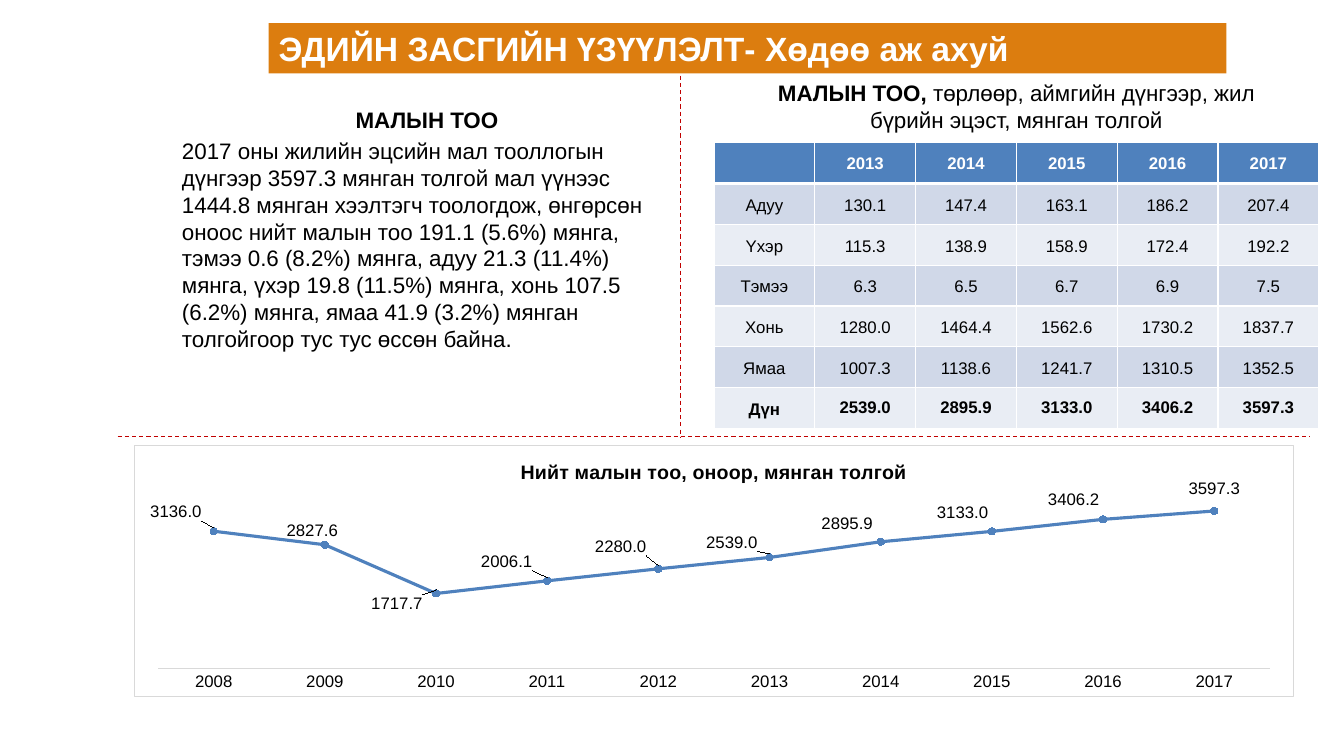
from pptx import Presentation
from pptx.chart.data import CategoryChartData
from pptx.dml.color import RGBColor
from pptx.enum.chart import XL_CHART_TYPE, XL_LABEL_POSITION, XL_MARKER_STYLE, XL_TICK_MARK
from pptx.enum.dml import MSO_LINE
from pptx.enum.shapes import MSO_CONNECTOR, MSO_SHAPE
from pptx.enum.text import MSO_ANCHOR, PP_ALIGN
from pptx.oxml import parse_xml
from pptx.oxml.ns import nsdecls
from pptx.util import Pt

FONT, BLACK, WHITE = "Arial", "000000", "FFFFFF"
BLUE, ORANGE, RED, GREY = "4F81BD", "DC7D0F", "C00000", "D9D9D9"
BANDS = ("E9EDF4", "D0D8E8")

YEARS = ["2013", "2014", "2015", "2016", "2017"]
HERD = [
    ["", *YEARS],
    ["Адуу", "130.1", "147.4", "163.1", "186.2", "207.4"],
    ["Yхэр", "115.3", "138.9", "158.9", "172.4", "192.2"],
    ["Тэмээ", "6.3", "6.5", "6.7", "6.9", "7.5"],
    ["Хонь", "1280.0", "1464.4", "1562.6", "1730.2", "1837.7"],
    ["Ямаа", "1007.3", "1138.6", "1241.7", "1310.5", "1352.5"],
    ["Дүн", "2539.0", "2895.9", "3133.0", "3406.2", "3597.3"],
]
TOTALS = {
    "2008": 3136.0, "2009": 2827.6, "2010": 1717.7, "2011": 2006.1, "2012": 2280.0,
    "2013": 2539.0, "2014": 2895.9, "2015": 3133.0, "2016": 3406.2, "2017": 3597.3,
}
LABEL_SHIFTS = [(-27, -2), (-9, 2), (-28, 19), (-29, -2), (-27, -4),
                (-27, 1), (-24, -1), (-21, -2), (-21, -2), (0, -4)]
SUMMARY = (
    "2017 оны жилийн эцсийн мал тооллогын дүнгээр 3597.3 мянган толгой мал үүнээс "
    "1444.8 мянган хээлтэгч тоологдож, өнгөрсөн оноос нийт малын тоо 191.1 (5.6%) мянга, "
    "тэмээ 0.6 (8.2%) мянга, адуу 21.3 (11.4%) мянга, үхэр 19.8 (11.5%) мянга, "
    "хонь 107.5 (6.2%) мянга, ямаа 41.9 (3.2%) мянган толгойгоор тус тус өссөн байна."
)


def rgb(value):
    """Turn a hex string into a colour."""
    return RGBColor.from_string(value)


def layout_xml(x, y, size="", target=""):
    """Make a manual chart layout."""
    return parse_xml(
        f'<c:layout {nsdecls("c")}><c:manualLayout>{target}'
        f'<c:x val="{x:.4f}"/><c:y val="{y:.4f}"/>{size}</c:manualLayout></c:layout>')


class SlideBuilder:
    """Hold the style and the current slide."""

    def __init__(self, slide, font):
        """Keep the slide and the font name."""
        self.shapes = slide.shapes
        self.font = font

    def style(self, font, size, color, bold=False):
        """Apply the typeface, size, colour and weight."""
        font.name, font.size, font.bold = self.font, Pt(size), bold
        font.color.rgb = rgb(color)

    def fill_text(self, tf, paragraphs, size, color, anchor):
        """Fill a frame from (alignment, [(text, bold), ...]) pairs."""
        tf.word_wrap = True
        tf.vertical_anchor = anchor
        for i, (align, runs) in enumerate(paragraphs):
            p = tf.add_paragraph() if i else tf.paragraphs[0]
            p.alignment = align
            if i:
                p.space_before = Pt(size * 0.2)
            for text, bold in runs:
                r = p.add_run()
                r.text = text
                self.style(r.font, size, color, bold)

    def text(self, x, y, w, h, paragraphs, size, anchor=MSO_ANCHOR.TOP, left=7.2, right=7.2):
        """Add a wrapped text box."""
        tf = self.shapes.add_textbox(Pt(x), Pt(y), Pt(w), Pt(h)).text_frame
        tf.margin_left, tf.margin_right = Pt(left), Pt(right)
        self.fill_text(tf, paragraphs, size, BLACK, anchor)

    def banner(self, x, y, w, h, text, size, fill):
        """Add a filled heading bar."""
        sp = self.shapes.add_shape(MSO_SHAPE.RECTANGLE, Pt(x), Pt(y), Pt(w), Pt(h))
        sp.shadow.inherit = False
        sp.fill.solid()
        sp.fill.fore_color.rgb = rgb(fill)
        sp.line.fill.background()
        self.fill_text(sp.text_frame, [(PP_ALIGN.JUSTIFY, [(text, True)])], size, WHITE, MSO_ANCHOR.MIDDLE)

    def divider(self, x1, y1, x2, y2, color):
        """Add a dashed dividing line."""
        line = self.shapes.add_connector(MSO_CONNECTOR.STRAIGHT, Pt(x1), Pt(y1), Pt(x2), Pt(y2))
        line.line.color.rgb = rgb(color)
        line.line.width = Pt(0.75)
        line.line.dash_style = MSO_LINE.DASH
        line.element.spPr.append(parse_xml(f'<a:effectLst {nsdecls("a")}/>'))

    def cell(self, cell, text, fill, color, bold, spacing, bottom):
        """Set the borders, fill and text of one table cell."""
        tc_pr = cell._tc.get_or_add_tcPr()
        for side, width in (("L", 1), ("R", 1), ("T", 1), ("B", bottom)):
            tc_pr.append(parse_xml(
                f'<a:ln{side} {nsdecls("a")} w="{Pt(width)}"><a:solidFill>'
                f'<a:srgbClr val="{WHITE}"/></a:solidFill></a:ln{side}>'))
        cell.fill.solid()
        cell.fill.fore_color.rgb = rgb(fill)
        cell.margin_top = cell.margin_bottom = 0
        cell.margin_left = cell.margin_right = Pt(6.5)
        cell.vertical_anchor = MSO_ANCHOR.MIDDLE
        p = cell.text_frame.paragraphs[0]
        p.text = text
        p.alignment = PP_ALIGN.CENTER
        p.line_spacing = spacing
        for r in p.runs:
            self.style(r.font, 12, color, bold)

    def table(self, x, y, w, h, rows):
        """Add a banded table with a header and a total row."""
        last = len(rows) - 1
        table = self.shapes.add_table(len(rows), len(rows[0]), Pt(x), Pt(y), Pt(w), Pt(h)).table
        table.first_row = table.horz_banding = False
        for i, row in enumerate(rows):
            head = i == 0
            for j, text in enumerate(row):
                spacing = 1.0 if head or (i == last and j) else 1.15
                self.cell(table.cell(i, j), text, BLUE if head else BANDS[i % 2],
                          WHITE if head else BLACK, i in (0, last), spacing, 3 if head else 1)

    def line_chart(self, x, y, w, h, title, values, shifts):
        """Add a line chart with markers and shifted value labels."""
        data = CategoryChartData(number_format="0.0")
        data.categories = list(values)
        data.add_series("Series 1", values.values())
        chart = self.shapes.add_chart(
            XL_CHART_TYPE.LINE_MARKERS, Pt(x), Pt(y), Pt(w), Pt(h), data).chart
        self.style(chart.font, 12, BLACK)
        chart.has_legend = False
        chart.has_title = True
        chart.chart_title.include_in_layout = False
        p = chart.chart_title.text_frame.paragraphs[0]
        p.text = title
        self.style(p.runs[0].font, 14, BLACK, True)

        axis = chart.value_axis
        axis.visible = axis.has_major_gridlines = False
        axis.minimum_scale, axis.maximum_scale = 0, 4000
        axis = chart.category_axis
        axis.major_tick_mark = XL_TICK_MARK.NONE
        axis.format.line.color.rgb = rgb(GREY)
        axis.format.line.width = Pt(0.75)

        plot = chart.plots[0]
        plot.vary_by_categories = False
        series = plot.series[0]
        series.smooth = False
        series.format.line.color.rgb = rgb(BLUE)
        series.format.line.width = Pt(2.25)
        marker = series.marker
        marker.style, marker.size = XL_MARKER_STYLE.CIRCLE, 5
        marker.format.fill.solid()
        marker.format.fill.fore_color.rgb = rgb(BLUE)
        marker.format.line.color.rgb = rgb(BLUE)
        labels = series.data_labels
        labels.show_value = True
        labels.number_format, labels.number_format_is_linked = "0.0", False
        labels.position = XL_LABEL_POSITION.ABOVE
        for i in range(len(shifts)):
            series.points[i].data_label.position = XL_LABEL_POSITION.ABOVE

        root = chart.element
        for label, (dx, dy) in zip(root.xpath(".//c:dLbl"), shifts):
            label.insert(1, layout_xml(dx / w, dy / h))
        area = root.xpath(".//c:plotArea")[0]
        for old in area.xpath("./c:layout"):
            area.remove(old)
        area.insert(0, layout_xml(0.02, 0.19, '<c:w val="0.96"/><c:h val="0.7"/>',
                                  '<c:layoutTarget val="inner"/><c:xMode val="edge"/><c:yMode val="edge"/>'))
        root.xpath("./c:chart")[0].addnext(parse_xml(
            f'<c:spPr {nsdecls("c", "a")}><a:solidFill><a:srgbClr val="{WHITE}"/></a:solidFill>'
            f'<a:ln w="{Pt(0.75)}"><a:solidFill><a:srgbClr val="{GREY}"/></a:solidFill></a:ln></c:spPr>'))


def main():
    """Build and save the slide."""
    prs = Presentation()
    prs.slide_width, prs.slide_height = Pt(960), Pt(540)
    s = SlideBuilder(prs.slides.add_slide(prs.slide_layouts[6]), FONT)
    s.text(522, 55, 408, 41, [(PP_ALIGN.CENTER, [
        ("МАЛЫН ТОО, ", True),
        ("төрлөөр, аймгийн дүнгээр, жил бүрийн эцэст, мянган толгой", False)])],
        16, MSO_ANCHOR.MIDDLE, left=16, right=16)
    s.table(510, 102, 432, 204, HERD)
    s.text(96, 72, 396, 228, [
        (PP_ALIGN.CENTER, [("МАЛЫН ТОО", True)]),
        (PP_ALIGN.LEFT, [(SUMMARY, False)])], 16, left=34, right=12)
    s.banner(192, 16.5, 684, 36, "ЭДИЙН ЗАСГИЙН ҮЗҮҮЛЭЛТ- Хөдөө аж ахуй", 24, ORANGE)
    s.divider(84, 312, 936, 312, RED)
    s.divider(486, 54, 486, 312, RED)
    s.line_chart(96, 318, 828, 180, "Нийт малын тоо, оноор, мянган толгой", TOTALS, LABEL_SHIFTS)
    prs.save("out.pptx")


if __name__ == "__main__":
    main()
